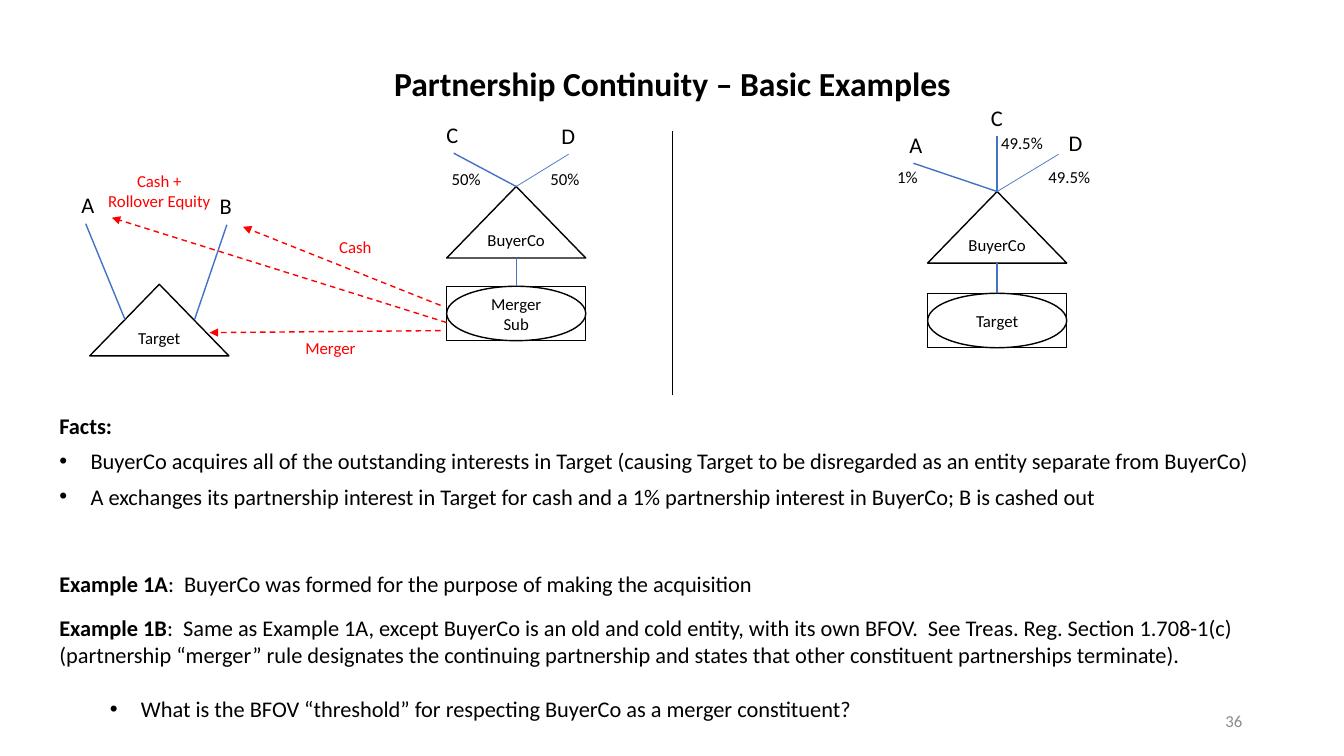
"""Draw the partnership continuity slide."""
from dataclasses import dataclass
from typing import Any, NamedTuple, Optional

from lxml.etree import SubElement
from pptx import Presentation
from pptx.dml.color import RGBColor
from pptx.enum.dml import MSO_LINE
from pptx.enum.shapes import MSO_CONNECTOR, MSO_SHAPE
from pptx.enum.text import MSO_ANCHOR, MSO_AUTO_SIZE, PP_ALIGN
from pptx.oxml.ns import qn
from pptx.util import Inches, Pt


@dataclass(frozen=True)
class Theme:
    """Colours and type sizes."""
    font: str = "Calibri"
    ink: str = "000000"
    owner: str = "4472C4"
    deal: str = "FF0000"
    faint: str = "8C8C8C"
    title: int = 24
    body: int = 16
    small: int = 12


class Label(NamedTuple):
    """Loose text at a place."""
    text: str
    left: float
    top: float
    width: float
    height: float
    size: int
    color: str
    align: Any = PP_ALIGN.LEFT


class Firm(NamedTuple):
    """A triangle or a boxed oval with a name."""
    name: str
    left: float
    top: float
    boxed: bool = False


class Link(NamedTuple):
    """A line, joined to firms where they are named."""
    start: tuple[float, float]
    end: tuple[float, float]
    color: str
    width: float = 1
    arrow: bool = False
    source: Optional[int] = None


class Para(NamedTuple):
    """A body paragraph with a bold lead."""
    lead: str
    rest: str
    after: float = 0
    indent: float = 0
    level: int = 0


THEME = Theme()
WIDE = 1.38
TRI, BOX = 0.71, 0.54

FIRMS = [
    Firm("Target", 0.89, 2.82),
    Firm("BuyerCo", 4.43, 1.85),
    Firm("Merger\nSub", 4.43, 2.84, True),
    Firm("BuyerCo", 9.2, 1.9),
    Firm("Target", 9.2, 2.91, True),
]

LINKS = [
    Link((1.24, 3.17), (0.85, 2.22), THEME.owner),
    Link((1.93, 3.17), (2.25, 2.23), THEME.owner),
    Link((5.12, 1.85), (4.5, 1.52), THEME.owner, source=1),
    Link((5.12, 1.85), (5.64, 1.53), THEME.owner, 0.5, source=1),
    Link((5.12, 2.84), (5.12, 2.56), THEME.owner, source=2),
    Link((9.89, 1.9), (9.06, 1.62), THEME.owner, source=3),
    Link((9.89, 1.9), (9.89, 1.35), THEME.owner, source=3),
    Link((9.89, 1.9), (10.5, 1.53), THEME.owner, 0.5, source=3),
    Link((9.89, 2.91), (9.89, 2.61), THEME.owner, source=4),
    Link((4.37, 3.28), (2.08, 3.3), THEME.deal, arrow=True),
    Link((4.37, 3.03), (2.41, 2.25), THEME.deal, arrow=True),
    Link((4.43, 3.2), (1.11, 2.16), THEME.deal, arrow=True),
    Link((6.67, 3.92), (6.67, 1.3), THEME.ink),
]

OWNERS = [("A", 0.71, 1.85), ("B", 2.08, 1.86), ("C", 4.33, 1.15), ("D", 5.47, 1.16),
          ("A", 8.92, 1.25), ("C", 9.73, 0.98), ("D", 10.5, 1.23)]
WIDTHS = {"A": 0.28, "B": 0.33, "C": 0.33, "D": 0.34, "1%": 0.41, "50%": 0.49, "49.5%": 0.62}
SHARES = [("50%", 4.38, 1.62), ("50%", 5.36, 1.62), ("1%", 8.8, 1.61),
          ("49.5%", 10.3, 1.61), ("49.5%", 9.83, 1.27)]

LABELS = [
    Label("Partnership Continuity – Basic Examples", 0.92, 0.58, 11.5, 0.67,
          THEME.title, THEME.ink, PP_ALIGN.CENTER),
    Label("36", 9.42, 6.95, 3, 0.4, THEME.small, THEME.faint, PP_ALIGN.RIGHT),
    Label("Merger", 2.93, 3.3, 0.7, 0.3, THEME.small, THEME.deal),
    Label("Cash", 3.26, 2.3, 0.53, 0.3, THEME.small, THEME.deal, PP_ALIGN.CENTER),
    Label("Cash +\nRollover Equity", 0.97, 1.64, 1.22, 0.5,
          THEME.small, THEME.deal, PP_ALIGN.CENTER),
    *(Label(t, x, y, WIDTHS[t], 0.37, THEME.body, THEME.ink) for t, x, y in OWNERS),
    *(Label(t, x, y, WIDTHS[t], 0.3, THEME.small, THEME.ink) for t, x, y in SHARES),
]

BODY = [
    Para("Facts:", "", 6),
    Para("", "BuyerCo acquires all of the outstanding interests in Target (causing Target "
         "to be disregarded as an entity separate from BuyerCo)", 6, 0.31),
    Para("", "A exchanges its partnership interest in Target for cash and a 1% partnership "
         "interest in BuyerCo; B is cashed out", 43.5, 0.31),
    Para("Example 1A", ":  BuyerCo was formed for the purpose of making the acquisition", 12),
    Para("Example 1B", ":  Same as Example 1A, except BuyerCo is an old and cold entity, with "
         "its own BFOV.  See Treas. Reg. Section 1.708-1(c) (partnership “merger” rule "
         "designates the continuing partnership and states that other constituent "
         "partnerships terminate).", 19.5),
    Para("", "What is the BFOV “threshold” for respecting BuyerCo as a merger constituent?",
         0, 0.81, 1),
]


def apply(item: Any, form: dict[str, Any]) -> None:
    """Set each named value on the item."""
    for key, value in form.items():
        setattr(item, key, value)


def style(run: Any, size: int, color: str, bold: bool = False) -> None:
    """Format one run."""
    apply(run.font, {"name": THEME.font, "size": Pt(size), "bold": bold})
    run.font.color.rgb = RGBColor.from_string(color)


def write(frame: Any, text: str, size: int, color: str, align: Any, bold: bool = False) -> None:
    """Fill a frame with one aligned paragraph."""
    para = frame.paragraphs[0]
    apply(para, {"text": text, "alignment": align})
    for run in para.runs:
        style(run, size, color, bold)


def add_label(slide: Any, label: Label) -> None:
    """Draw a label."""
    place = map(Inches, (label.left, label.top, label.width, label.height))
    frame = slide.shapes.add_textbox(*place).text_frame
    broad = label.width > 2
    apply(frame, {"word_wrap": broad,
                  "auto_size": MSO_AUTO_SIZE.NONE if broad else MSO_AUTO_SIZE.SHAPE_TO_FIT_TEXT,
                  "vertical_anchor": MSO_ANCHOR.MIDDLE if label.color == THEME.faint
                  else MSO_ANCHOR.TOP})
    write(frame, label.text, label.size, label.color, label.align, label.size == THEME.title)


def add_firm(slide: Any, firm: Firm) -> Any:
    """Draw a firm and return the shape that links join."""
    kinds = [MSO_SHAPE.RECTANGLE, MSO_SHAPE.OVAL] if firm.boxed else [MSO_SHAPE.ISOSCELES_TRIANGLE]
    high = BOX if firm.boxed else TRI
    parts = []
    for kind in kinds:
        part = slide.shapes.add_shape(kind, *map(Inches, (firm.left, firm.top, WIDE, high)))
        part.shadow.inherit = False
        part.fill.background()
        part.line.color.rgb = RGBColor.from_string(THEME.ink)
        part.line.width = Pt(1)
        parts.append(part)
    frame = parts[-1].text_frame
    apply(frame, {"word_wrap": firm.boxed, "vertical_anchor": MSO_ANCHOR.MIDDLE})
    write(frame, firm.name, THEME.small, THEME.ink, PP_ALIGN.CENTER)
    return parts[0]


def add_link(slide: Any, link: Link, firms: list[Any]) -> None:
    """Draw a link."""
    line = slide.shapes.add_connector(MSO_CONNECTOR.STRAIGHT, *map(Inches, link.start + link.end))
    if link.source is not None:
        line.begin_connect(firms[link.source], 0)
    line.line.color.rgb = RGBColor.from_string(link.color)
    line.line.width = Pt(link.width)
    if link.arrow:
        line.line.dash_style = MSO_LINE.DASH
        SubElement(line.line._get_or_add_ln(), qn("a:tailEnd"), type="triangle")
    SubElement(line._element.spPr, qn("a:effectLst"))


def add_body(slide: Any) -> None:
    """Draw the facts and examples."""
    frame = slide.shapes.add_textbox(*map(Inches, (0.49, 4.04, 12.35, 3.2))).text_frame
    apply(frame, {"word_wrap": True, "auto_size": MSO_AUTO_SIZE.SHAPE_TO_FIT_TEXT})
    for spot, item in enumerate(BODY):
        para = frame.add_paragraph() if spot else frame.paragraphs[0]
        apply(para, {"space_after": Pt(item.after), "level": item.level})
        for text, bold in ((item.lead, True), (item.rest, False)):
            if text:
                run = para.add_run()
                run.text = text
                style(run, THEME.body, THEME.ink, bold)
        if item.indent:
            props = para._p.get_or_add_pPr()
            props.set("marL", str(Inches(item.indent)))
            props.set("indent", str(-Inches(0.31)))
            SubElement(props, qn("a:buFont"), typeface="Arial")
            SubElement(props, qn("a:buChar"), char="•")


def main() -> None:
    """Build and save the slide."""
    deck = Presentation()
    apply(deck, {"slide_width": Inches(13.33), "slide_height": Inches(7.5)})
    slide = deck.slides.add_slide(deck.slide_layouts[6])
    firms = [add_firm(slide, firm) for firm in FIRMS]
    for link in LINKS:
        add_link(slide, link, firms)
    for label in LABELS:
        add_label(slide, label)
    add_body(slide)
    deck.save("out.pptx")


if __name__ == "__main__":
    main()
